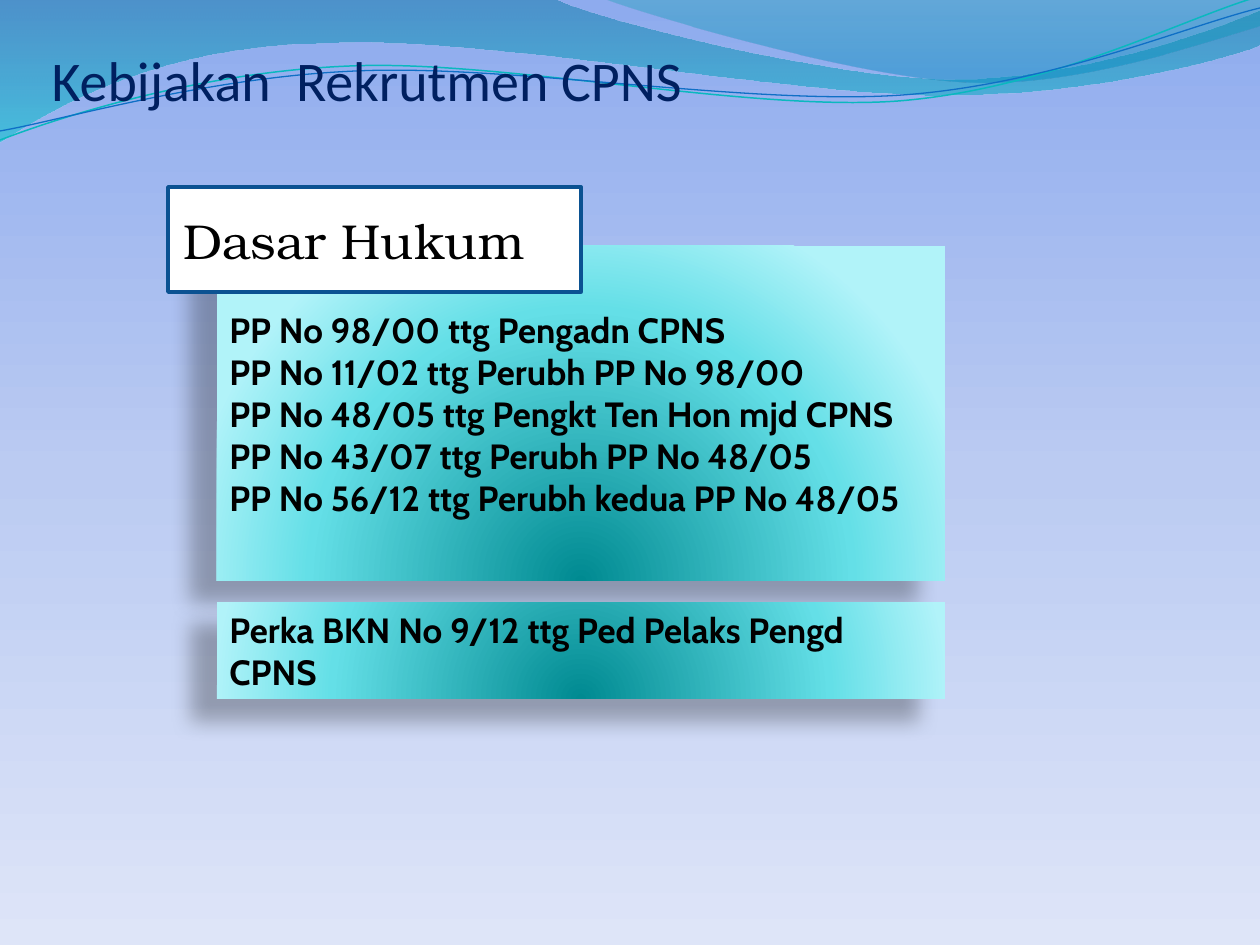
import dataclasses
import typing

import lxml.etree
import pptx
import pptx.dml.color
import pptx.enum.shapes
import pptx.enum.text
import pptx.oxml.ns
import pptx.util

PX = 914400 / 126

Point = tuple[int, int]
Stop = tuple[int, str, int]


@dataclasses.dataclass
class Wave:
    start: Point
    segments: list[tuple[Point, ...]]
    stops: tuple[Stop, ...] = ()
    line: str = ""
    weight: float = 0


@dataclasses.dataclass
class Style:
    font: str
    size: int
    color: str = "000000"
    bold: bool = False
    centred: bool = False


@dataclasses.dataclass
class Panel:
    box: tuple[int, int, int, int]
    lines: list[str]
    style: Style
    border: str = ""
    right_margin: int = 13


BACKGROUND = ((0, "8EABEE", 100), (50, "BBCBF2", 100), (100, "DEE5F8", 100))
GLOW = ((0, "008A91", 100), (68, "64DFE7", 100), (100, "B1F3F9", 100))
BODY = Style("Cabin", 20, bold=True)
HEADING = Style("TeX Gyre Bonum", 28, centred=True)

WAVES = [
    Wave((0, 0), [
        ((554, -1),),
        ((600, 21), (837, 79), (955, 79)),
        ((1075, 79), (1207, 33), (1260, 11)),
        ((1261, 45),),
        ((1239, 55), (1096, 96), (940, 95)),
        ((784, 95), (481, 35), (324, 43)),
        ((163, 45), (58, 105), (-1, 142)),
    ], stops=((0, "0074A1", 45), (100, "00C6CF", 55))),
    Wave((604, -1), [
        ((641, 14), (859, 78), (969, 82)),
        ((1079, 87), (1211, 40), (1260, 26)),
        ((1260, 0),),
    ], stops=((0, "00A1A9", 30), (80, "008BBF", 45))),
    Wave((0, 140), [
        ((60, 117), (199, 72), (349, 66)),
        ((498, 59), (747, 112), (898, 101)),
        ((1050, 89), (1182, 19), (1257, -3)),
    ], line="0AB8BF", weight=0.85),
    Wave((0, 131), [
        ((59, 121), (207, 77), (357, 71)),
        ((508, 64), (752, 106), (903, 95)),
        ((1053, 84), (1186, 26), (1260, 8)),
    ], line="0F6FC6", weight=0.75),
]

PANELS = [
    Panel((217, 246, 728, 335), [
        "PP No 98/00 ttg Pengadn CPNS",
        "PP No 11/02 ttg Perubh PP No 98/00",
        "PP No 48/05 ttg Pengkt Ten Hon mjd CPNS",
        "PP No 43/07 ttg Perubh PP No 48/05",
        "PP No 56/12 ttg Perubh kedua PP No 48/05",
    ], BODY),
    Panel((168, 187, 413, 105), ["Dasar Hukum"], HEADING, "0B5292", 54),
    Panel((217, 602, 728, 97), ["Perka BKN No 9/12 ttg Ped Pelaks Pengd CPNS"], BODY),
]


def px(length: float) -> int:
    """Turn pixels into EMU."""
    return round(length * PX)


def rgb(color: str) -> pptx.dml.color.RGBColor:
    """Turn a hex string into a colour."""
    return pptx.dml.color.RGBColor.from_string(color)


def add_element(parent: typing.Any, tag: str, **attributes: typing.Any) -> typing.Any:
    """Append a DrawingML element with its attributes."""
    values = {name: str(value) for name, value in attributes.items()}
    return lxml.etree.SubElement(parent, pptx.oxml.ns.qn(tag), values)


def add_color(parent: typing.Any, color: str, opacity: int) -> None:
    """Append a colour with its opacity in percent."""
    element = add_element(parent, "a:srgbClr", val=color)
    if opacity < 100:
        add_element(element, "a:alpha", val=opacity * 1000)


def set_gradient(fill: typing.Any, owner: typing.Any, stops: typing.Iterable[Stop],
                 radial: bool = False) -> None:
    """Fill the owner element with a vertical or radial gradient."""
    fill.gradient()
    gradient = owner.find(".//" + pptx.oxml.ns.qn("a:gradFill"))
    for child in list(gradient):
        gradient.remove(child)
    stop_list = add_element(gradient, "a:gsLst")
    for position, color, opacity in stops:
        add_color(add_element(stop_list, "a:gs", pos=position * 1000), color, opacity)
    if radial:
        circle = add_element(gradient, "a:path", path="circle")
        add_element(circle, "a:fillToRect", l=50000, t=130000, r=50000, b=-30000)
    else:
        add_element(gradient, "a:lin", ang=5400000, scaled=0)


def bend(shape: typing.Any, wave: Wave) -> None:
    """Join the steps of each three-point segment into a cubic curve."""
    steps = iter(shape._element.findall(".//" + pptx.oxml.ns.qn("a:lnTo")))
    for segment in wave.segments:
        group = [next(steps) for _ in segment]
        if len(group) == 3:
            curve = add_element(group[0].getparent(), "a:cubicBezTo")
            group[0].addprevious(curve)
            for step in group:
                curve.append(step[0])
                step.getparent().remove(step)


def draw_wave(slide: typing.Any, wave: Wave) -> None:
    """Draw one wave as a filled band or a thin line."""
    builder = slide.shapes.build_freeform(*wave.start, scale=PX)
    points = [point for segment in wave.segments for point in segment]
    builder.add_line_segments(points, close=bool(wave.stops))
    shape = builder.convert_to_shape()
    bend(shape, wave)
    shape.shadow.inherit = False
    if wave.stops:
        set_gradient(shape.fill, shape._element.spPr, wave.stops)
        shape.line.fill.background()
    else:
        shape.fill.background()
        shape.line.color.rgb = rgb(wave.line)
        shape.line.width = pptx.util.Pt(wave.weight)


def write(shape: typing.Any, lines: list[str], style: Style) -> None:
    """Write vertically centred lines in one style."""
    align = pptx.enum.text.PP_ALIGN
    frame = shape.text_frame
    frame.text = "\n".join(lines)
    frame.word_wrap = True
    frame.vertical_anchor = pptx.enum.text.MSO_ANCHOR.MIDDLE
    for paragraph in frame.paragraphs:
        paragraph.alignment = align.CENTER if style.centred else align.LEFT
        for run in paragraph.runs:
            run.font.name = style.font
            run.font.size = pptx.util.Pt(style.size)
            run.font.bold = style.bold
            run.font.color.rgb = rgb(style.color)


def draw_panel(slide: typing.Any, panel: Panel) -> None:
    """Draw a bordered white panel or a glowing panel with a shadow."""
    kind = pptx.enum.shapes.MSO_SHAPE.RECTANGLE
    shape = slide.shapes.add_shape(kind, *map(px, panel.box))
    shape.shadow.inherit = False
    if panel.border:
        shape.fill.solid()
        shape.fill.fore_color.rgb = rgb("FFFFFF")
        shape.line.color.rgb = rgb(panel.border)
        shape.line.width = pptx.util.Pt(2)
    else:
        properties = shape._element.spPr
        set_gradient(shape.fill, properties, GLOW, radial=True)
        shape.line.fill.background()
        effects = properties.find(pptx.oxml.ns.qn("a:effectLst"))
        shadow = add_element(effects, "a:outerShdw", blurRad=150000, dist=250000,
                             dir=141 * 60000, algn="ctr", rotWithShape=0)
        add_color(shadow, "000000", 28)
    write(shape, panel.lines, panel.style)
    shape.text_frame.margin_right = px(panel.right_margin)


def main() -> None:
    """Build and save the slide."""
    presentation = pptx.Presentation()
    presentation.slide_width, presentation.slide_height = px(1260), px(945)
    slide = presentation.slides.add_slide(presentation.slide_layouts[5])
    set_gradient(slide.background.fill, slide._element, BACKGROUND)
    for wave in WAVES:
        draw_wave(slide, wave)
    title = slide.shapes.title
    title.left, title.top, title.width, title.height = map(px, (39, 40, 738, 79))
    write(title, ["Kebijakan  Rekrutmen CPNS"], Style("Calibri", 32, "002060"))
    slide.shapes._spTree.append(title._element)
    for panel in PANELS:
        draw_panel(slide, panel)
    presentation.save("out.pptx")


if __name__ == "__main__":
    main()
